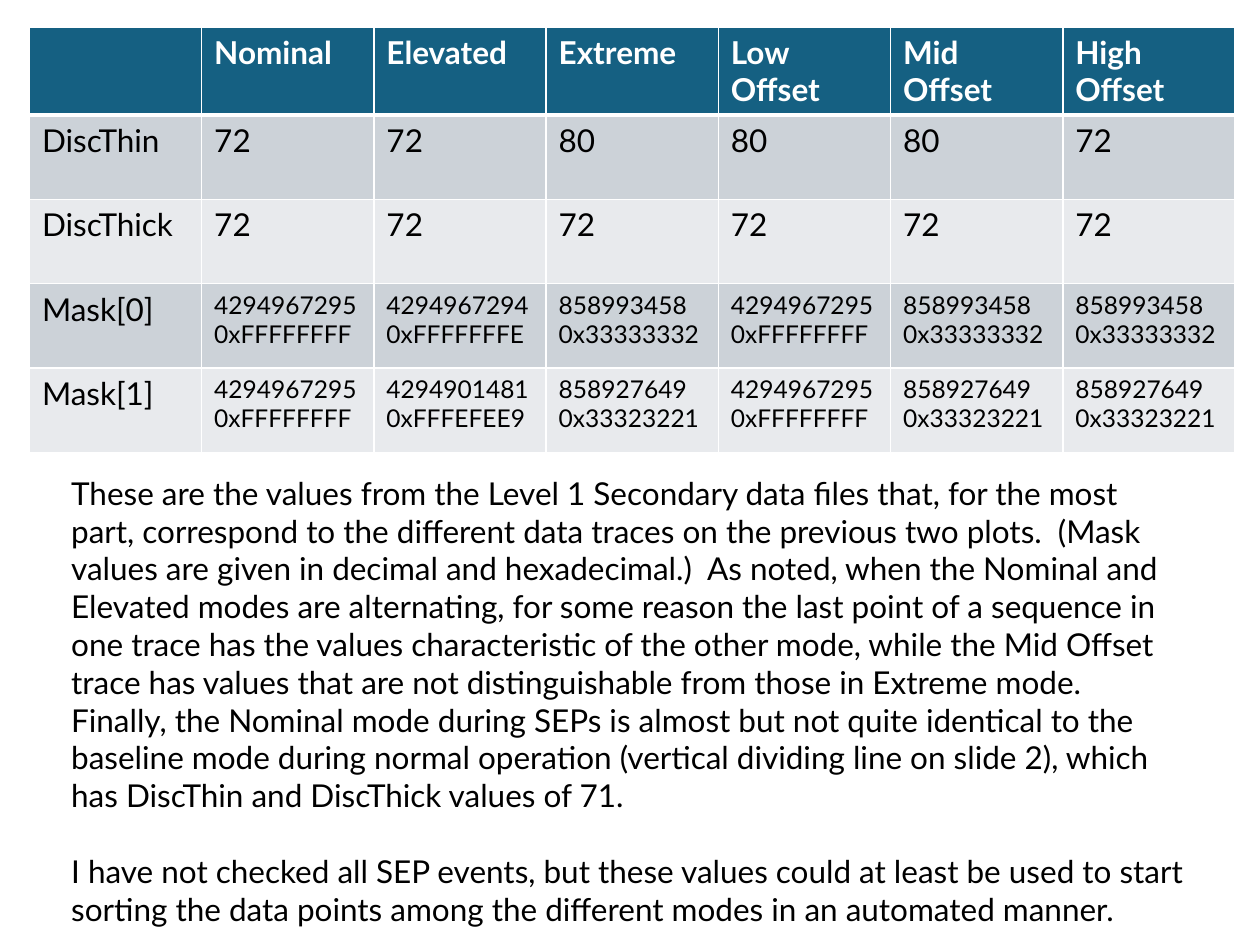
import lxml.etree
import pptx
import pptx.dml.color
import pptx.oxml.ns
import pptx.util

Pt = pptx.util.Pt
COLORS = {"header": "156082", "odd": "CCD2D8", "even": "E8EAED", "white": "FFFFFF", "text": "000000"}
HEADER = {"name": "Lato", "size": Pt(18), "bold": True}
BODY = {"name": "Lato", "size": Pt(18), "bold": False}
SMALL = {"name": "Lato", "size": Pt(14), "bold": False}

MODES = ["", "Nominal", "Elevated", "Extreme", "Low Offset", "Mid Offset", "High Offset"]
THRESHOLDS = {
    "DiscThin": [72, 72, 80, 80, 80, 72],
    "DiscThick": [72, 72, 72, 72, 72, 72],
}
MASKS = {
    "Mask[0]": [4294967295, 4294967294, 858993458, 4294967295, 858993458, 858993458],
    "Mask[1]": [4294967295, 4294901481, 858927649, 4294967295, 858927649, 858927649],
}
NOTES = [
    "These are the values from the Level 1 Secondary data files that, for the most part, "
    "correspond to the different data traces on the previous two plots.  (Mask values are given "
    "in decimal and hexadecimal.)  As noted, when the Nominal and Elevated modes are alternating, "
    "for some reason the last point of a sequence in one trace has the values characteristic of "
    "the other mode, while the Mid Offset trace has values that are not distinguishable from those "
    "in Extreme mode.  Finally, the Nominal mode during SEPs is almost but not quite identical to "
    "the baseline mode during normal operation (vertical dividing line on slide 2), which has "
    "DiscThin and DiscThick values of 71.",
    "I have not checked all SEP events, but these values could at least be used to start sorting "
    "the data points among the different modes in an automated manner.",
]


def rgb(name):
    """Return the named colour."""
    return pptx.dml.color.RGBColor.from_string(COLORS[name])


def write_lines(frame, lines, style, color):
    """Write one paragraph per line in the given style."""
    for index, line in enumerate(lines):
        para = frame.add_paragraph() if index else frame.paragraphs[0]
        span = para.add_run()
        span.text = line
        for name, value in style.items():
            setattr(span.font, name, value)
        span.font.color.rgb = rgb(color)


def add_borders(cell, widths):
    """Draw white borders of the given widths around a cell."""
    qn = pptx.oxml.ns.qn
    properties = cell._tc.get_or_add_tcPr()
    for side, width in widths.items():
        line = lxml.etree.SubElement(properties, qn(f"a:ln{side}"), w=str(Pt(width)))
        fill = lxml.etree.SubElement(line, qn("a:solidFill"))
        lxml.etree.SubElement(fill, qn("a:srgbClr"), val=COLORS["white"])


def add_mode_table(slide, left, top, width, height):
    """Place the table of settings for each mode."""
    rows = [[[mode] if mode else [] for mode in MODES]]
    rows += [[[label]] + [[str(value)] for value in values] for label, values in THRESHOLDS.items()]
    rows += [
        [[label]] + [[str(value), f"0x{value:08X}"] for value in values]
        for label, values in MASKS.items()
    ]
    table = slide.shapes.add_table(len(rows), len(MODES), left, top, width, height).table
    for row_index, row in enumerate(rows):
        fill = "header" if row_index == 0 else ("even", "odd")[row_index % 2]
        widths = {"L": 1, "R": 1, "T": 3 if row_index == 1 else 1, "B": 3 if row_index == 0 else 1}
        for column_index, lines in enumerate(row):
            cell = table.cell(row_index, column_index)
            add_borders(cell, widths)
            cell.fill.solid()
            cell.fill.fore_color.rgb = rgb(fill)
            style = HEADER if row_index == 0 else SMALL if len(lines) > 1 else BODY
            write_lines(cell.text_frame, lines, style, "white" if row_index == 0 else "text")


def add_notes_text(slide, left, top, width, height):
    """Place the explanatory paragraphs."""
    box = slide.shapes.add_textbox(left, top, width, height)
    box.text_frame.word_wrap = True
    write_lines(box.text_frame, NOTES, BODY, "text")
    box.text_frame.paragraphs[1].space_before = Pt(21.6)


def main():
    """Build and save the deck."""
    deck = pptx.Presentation()
    deck.slide_width, deck.slide_height = Pt(720), Pt(540)
    slide = deck.slides.add_slide(deck.slide_layouts[6])
    add_mode_table(slide, Pt(16.8), Pt(15.3), Pt(689), Pt(241))
    add_notes_text(slide, Pt(33.6), Pt(267.2), Pt(651.6), Pt(269.3))
    deck.save("out.pptx")


if __name__ == "__main__":
    main()
